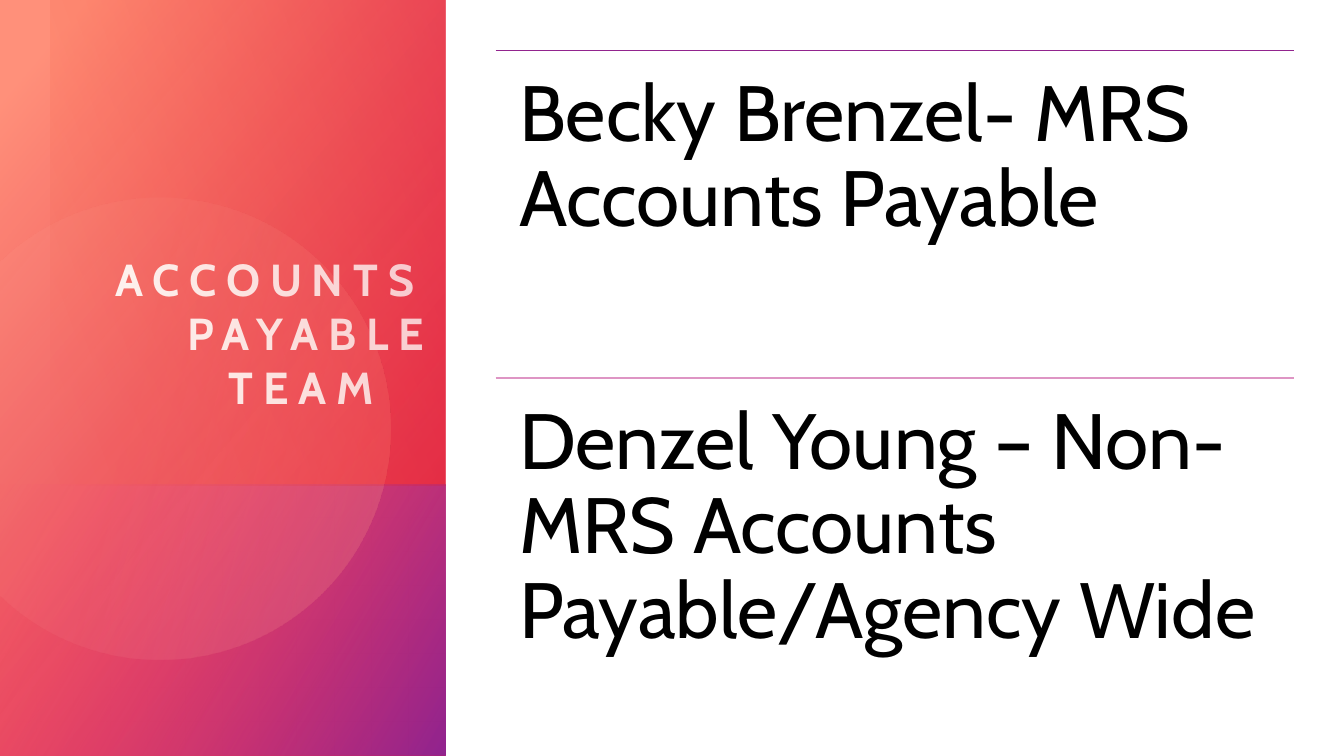
from math import acos, cos, sin

from lxml.etree import SubElement
from pptx import Presentation
from pptx.dml.color import RGBColor
from pptx.enum.shapes import MSO_CONNECTOR, MSO_SHAPE
from pptx.enum.text import MSO_ANCHOR, MSO_AUTO_SIZE, PP_ALIGN
from pptx.oxml.ns import qn
from pptx.util import Pt

COLORS = {
    "white": "FFFFFF",
    "black": "000000",
    "coral": "FF907A",
    "peach": "FFBCAF",
    "red": "DA002F",
    "orange": "FE4A00",
    "pink": "FF5076",
    "purple": "92248E",
    "rose": "DE95C4",
}
FONT = "Cabin"


def color_of(name):
    """Return the named colour."""
    return RGBColor.from_string(COLORS[name])


def fill_gradient(shape, stops, angle):
    """Fill a shape with (position, colour, opacity) stops at a clockwise angle."""
    shape.shadow.inherit = False
    shape.line.fill.background()
    shape.fill.gradient()
    shape.fill.gradient_angle = 360 - angle
    for stop, (position, color, _) in zip(shape.fill.gradient_stops, stops):
        stop.position = position / 100
        stop.color.rgb = color_of(color)
    color_elements = shape.element.spPr.iter(qn("a:srgbClr"))
    for element, (_, _, opacity) in zip(color_elements, stops):
        SubElement(element, qn("a:alpha")).set("val", str(opacity * 1000))


def add_turned_panel(slide, box, rotation, stops, angle):
    """Add a mirrored quarter-turned rectangle that covers the box."""
    left, top, width, height = box
    offset = (width - height) / 2
    shape = slide.shapes.add_shape(
        MSO_SHAPE.RECTANGLE, Pt(left + offset), Pt(top - offset), Pt(height), Pt(width))
    shape.rotation = rotation
    shape.element.spPr.xfrm.set("flipH", "1")
    fill_gradient(shape, stops, angle)


def add_cut_circle(slide, edge, center_x, center_y, radius):
    """Add a translucent circle cut off at a vertical left edge."""
    reach = acos((edge - center_x) / radius)
    steps = 120
    angles = [reach * (2 * step / steps - 1) for step in range(steps + 1)]
    points = [(Pt(center_x + radius * cos(angle)), Pt(center_y + radius * sin(angle)))
              for angle in angles]
    builder = slide.shapes.build_freeform(*points[0])
    builder.add_line_segments(points[1:], close=True)
    fill_gradient(builder.convert_to_shape(),
                  [(36, "peach", 6), (100, "coral", 26)], 14)


def write_text(paragraph, text, size, color, bold=False, align=PP_ALIGN.LEFT,
               line_spacing=1.0, letter_spacing=0, margin=0):
    """Write one formatted run into a paragraph."""
    paragraph.alignment = align
    paragraph.line_spacing = line_spacing
    paragraph.space_before = Pt(0)
    properties = paragraph._p.get_or_add_pPr()
    properties.set("marL", str(Pt(margin)))
    properties.set("indent", "0")
    run = paragraph.add_run()
    run.text = text
    run.font.name = FONT
    run.font.size = Pt(size)
    run.font.bold = bold
    run.font.color.rgb = color_of(color)
    run.font._element.set("spc", str(letter_spacing * 100))


def set_frame(frame, left, top, right, bottom, anchor):
    """Set the wrapping, insets and anchor of a text frame."""
    frame.word_wrap = True
    frame.auto_size = MSO_AUTO_SIZE.NONE
    frame.vertical_anchor = anchor
    frame.margin_left, frame.margin_top = Pt(left), Pt(top)
    frame.margin_right, frame.margin_bottom = Pt(right), Pt(bottom)


def place_title(slide, box):
    """Place the slide title in the box, with its last word stepped in."""
    title = slide.shapes.title
    title.left, title.top, title.width, title.height = (Pt(value) for value in box)
    frame = title.text_frame
    set_frame(frame, 0, 0, 0, 38.5, MSO_ANCHOR.BOTTOM)
    style = {"size": 32, "color": "white", "bold": True, "letter_spacing": 7}
    write_text(frame.paragraphs[0], "ACCOUNTS PAYABLE", align=PP_ALIGN.RIGHT, **style)
    write_text(frame.add_paragraph(), "TEAM", margin=127.5, **style)


def build_side_panel(slide, box):
    """Build the coloured panel with its circle and title."""
    left, top, width, height = box
    upper = 346.5
    strip = 36
    add_turned_panel(slide, box, 270, [(8, "coral", 100), (100, "red", 89)], 50)
    add_turned_panel(slide, (left, top + upper, width, height - upper), 270,
                     [(0, "pink", 0), (99, "purple", 100)], 60)
    add_cut_circle(slide, left, left + 114, top + 306, 165)
    add_turned_panel(slide, (left + strip, top, width - strip, upper), 90,
                     [(0, "red", 29), (100, "orange", 0)], 110)
    place_title(slide, (left + strip, top + 68.5, 267, 265))


def build_member(slide, box, text, line_color):
    """Build one team member entry under a rule."""
    left, top, width, height = box
    rule = slide.shapes.add_connector(
        MSO_CONNECTOR.STRAIGHT, Pt(left), Pt(top), Pt(left + width), Pt(top))
    rule.line.color.rgb = color_of(line_color)
    rule.line.width = Pt(1)
    SubElement(rule.element.spPr, qn("a:effectLst"))
    text_box = slide.shapes.add_textbox(Pt(left), Pt(top), Pt(width), Pt(height))
    set_frame(text_box.text_frame, 16.8, 16.8, 16.8, 16.8, MSO_ANCHOR.TOP)
    write_text(text_box.text_frame.paragraphs[0], text, size=56, color="black",
               line_spacing=0.9)


def build_member_list(slide, box):
    """Stack the team members in equal rows."""
    members = [
        ("Becky Brenzel- MRS Accounts Payable", "purple"),
        ("Denzel Young – Non-MRS Accounts Payable/Agency Wide", "rose"),
    ]
    left, top, width, height = box
    row = height / len(members)
    for index, (text, line_color) in enumerate(members):
        build_member(slide, (left, top + index * row, width, row), text, line_color)


def main():
    """Build and save the presentation."""
    presentation = Presentation()
    presentation.slide_width, presentation.slide_height = Pt(960), Pt(540)
    slide = presentation.slides.add_slide(presentation.slide_layouts[5])
    slide.background.fill.solid()
    slide.background.fill.fore_color.rgb = color_of("white")
    build_side_panel(slide, (0, 0, 318, 540))
    build_member_list(slide, (354, 36, 570, 468))
    title = slide.shapes.title.element
    title.getparent().insert(6, title)
    presentation.save("out.pptx")


if __name__ == "__main__":
    main()
